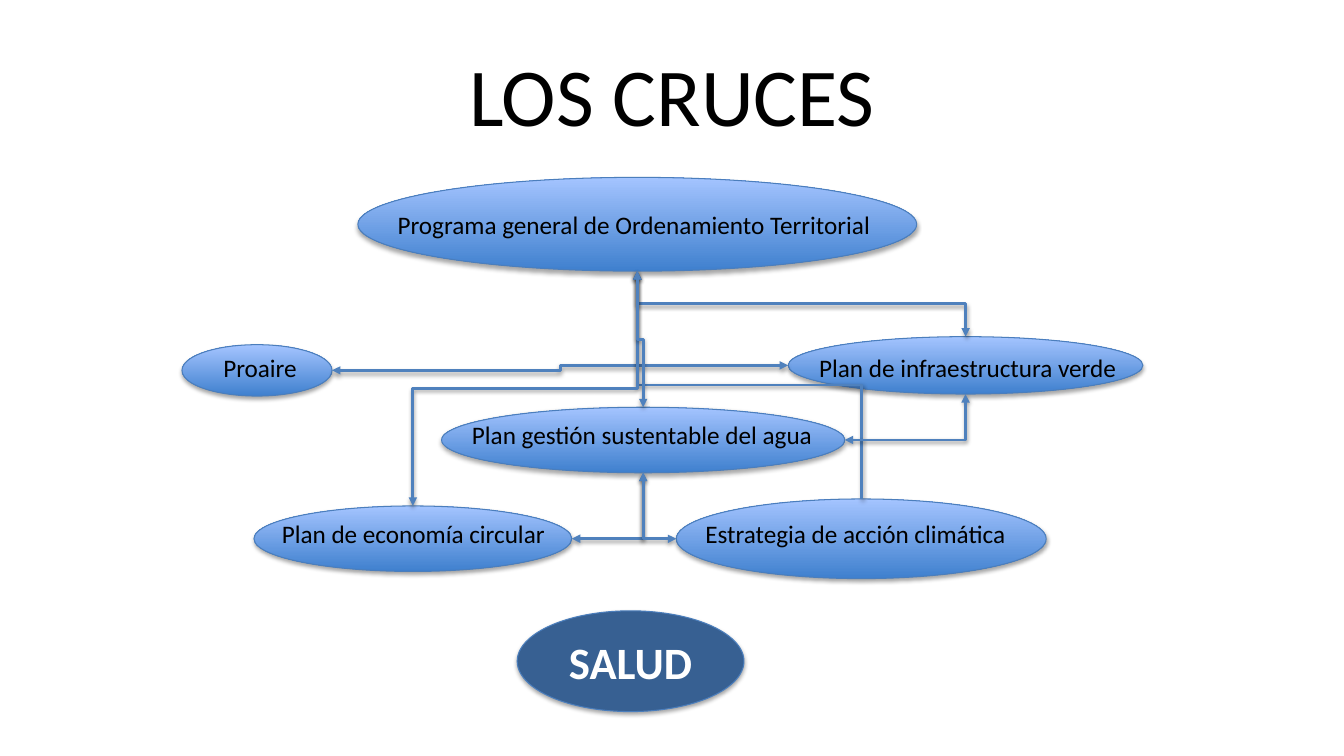
"""Build the slide that shows how the city plans cross each other."""
from dataclasses import dataclass
from enum import Enum

from lxml.etree import SubElement
from pptx import Presentation
from pptx.dml.color import RGBColor
from pptx.enum.shapes import MSO_CONNECTOR as Connector, MSO_SHAPE as Shape
from pptx.enum.text import MSO_ANCHOR as Anchor, MSO_AUTO_SIZE as AutoSize, PP_ALIGN as Align
from pptx.oxml.ns import qn
from pptx.util import Pt

FONT = "Calibri"
LABEL_HEIGHT = 29.1
COLOURS = {
    "text": "000000",
    "light_text": "FFFFFF",
    "gradient_bottom": "3F80CE",
    "gradient_top": "A4C4FF",
    "outline": "4B7EBC",
    "link": "4F81BD",
    "health": "376092",
    "shadow": "000000",
}


class Side(Enum):
    """Middle of an ellipse side, as fractions of its width and height."""
    TOP = (0.5, 0)
    BOTTOM = (0.5, 1)
    LEFT = (0, 0.5)
    RIGHT = (1, 0.5)


@dataclass(frozen=True)
class Plan:
    """An ellipse and the label laid over it, in points."""
    label: str
    left: float
    top: float
    width: float
    height: float
    label_left: float
    label_top: float
    label_width: float

    def point(self, side: Side) -> tuple[float, float]:
        """Return the middle of one side."""
        across, down = side.value
        return self.left + across * self.width, self.top + down * self.height


@dataclass(frozen=True)
class Link:
    """A bent arrow between the sides of two plans."""
    start: str
    start_side: Side
    end: str
    end_side: Side
    bends: int = 2
    two_way: bool = True


PLANS = {
    "water": Plan("Plan gestión sustentable del agua", 315.4, 290.9, 288, 46.8, 328.3, 295.9, 260.6),
    "climate": Plan("Estrategia de acción climática", 483.1, 356.4, 264.2, 56.9, 495.4, 366.5, 231.1),
    "circular": Plan("Plan de economía circular", 181.4, 361.4, 227, 46.8, 193, 366.5, 204.5),
    "green": Plan("Plan de infraestructura verde", 563, 240.5, 253.4, 41, 576.7, 248.4, 229),
    "air": Plan("Proaire", 130, 246.2, 107.2, 36.7, 151.9, 248.4, 67.7),
    "territory": Plan("Programa general de Ordenamiento Territorial", 255.6, 126.7, 399.2, 67, 275, 146.2, 355.7),
}

LINKS = [
    Link("air", Side.RIGHT, "green", Side.LEFT),
    Link("territory", Side.BOTTOM, "green", Side.TOP),
    Link("climate", Side.TOP, "territory", Side.BOTTOM, two_way=False),
    Link("circular", Side.TOP, "territory", Side.BOTTOM),
    Link("water", Side.RIGHT, "green", Side.BOTTOM, bends=1),
    Link("water", Side.TOP, "territory", Side.BOTTOM),
    Link("water", Side.BOTTOM, "circular", Side.RIGHT, bends=1),
    Link("water", Side.BOTTOM, "climate", Side.LEFT, bends=1),
]


def colour(name: str) -> RGBColor:
    """Return a named colour."""
    return RGBColor.from_string(COLOURS[name])


def write(frame, text: str, size: float, colour_name: str, bold: bool = False) -> None:
    """Fill a text frame with one formatted paragraph."""
    frame.text = text
    para = frame.paragraphs[0]
    para.alignment = Align.CENTER
    for span in para.runs:
        span.font.name = FONT
        span.font.size = Pt(size)
        span.font.bold = bold
        span.font.color.rgb = colour(colour_name)


def add_shadow(item, distance: float, opacity: int) -> None:
    """Give a shape or connector a soft shadow straight below it."""
    properties = item._element.spPr
    effects = properties.find(qn("a:effectLst"))
    if effects is None:
        effects = SubElement(properties, qn("a:effectLst"))
    shadow = SubElement(effects, qn("a:outerShdw"), blurRad=str(Pt(3.1)),
                        dist=str(Pt(distance)), dir="5400000", rotWithShape="0")
    tint = SubElement(shadow, qn("a:srgbClr"), val=COLOURS["shadow"])
    SubElement(tint, qn("a:alpha"), val=str(opacity * 1000))


def add_ellipse(page, left: float, top: float, width: float, height: float, fill: str = ""):
    """Draw an outlined ellipse, with a gradient unless a fill is named."""
    ellipse = page.shapes.add_shape(Shape.OVAL, Pt(left), Pt(top), Pt(width), Pt(height))
    if fill:
        ellipse.fill.solid()
        ellipse.fill.fore_color.rgb = colour(fill)
    else:
        ellipse.fill.gradient()
        ellipse.fill.gradient_angle = 90
        for stop, name in zip(ellipse.fill.gradient_stops, ("gradient_bottom", "gradient_top")):
            stop.color.rgb = colour(name)
    ellipse.line.color.rgb = colour("outline")
    ellipse.line.width = Pt(0.75)
    ellipse.shadow.inherit = False
    add_shadow(ellipse, 1.8, 35)
    return ellipse


def add_label(page, plan: Plan) -> None:
    """Write the name of a plan."""
    box = page.shapes.add_textbox(Pt(plan.label_left), Pt(plan.label_top),
                                  Pt(plan.label_width), Pt(LABEL_HEIGHT))
    box.text_frame.word_wrap = False
    box.text_frame.auto_size = AutoSize.SHAPE_TO_FIT_TEXT
    write(box.text_frame, plan.label, 18, "text")


def add_link(page, link: Link) -> None:
    """Draw a bent arrow, turned a quarter when it leaves vertically."""
    x1, y1 = PLANS[link.start].point(link.start_side)
    x2, y2 = PLANS[link.end].point(link.end_side)
    across, down = x2 - x1, y2 - y1
    turn = 0
    if link.start_side in (Side.TOP, Side.BOTTOM):
        turn = 270 if across * down > 0 else 90
        across, down = (-down, across) if turn == 270 else (down, -across)
    middle_x, middle_y = (x1 + x2) / 2, (y1 + y2) / 2
    arrow = page.shapes.add_connector(
        Connector.ELBOW,
        Pt(middle_x - across / 2), Pt(middle_y - down / 2),
        Pt(middle_x + across / 2), Pt(middle_y + down / 2))
    arrow.line.color.rgb = colour("link")
    arrow.line.width = Pt(2)
    properties = arrow._element.spPr
    properties.find(qn("a:prstGeom")).set("prst", f"bentConnector{link.bends + 1}")
    if turn:
        properties.find(qn("a:xfrm")).set("rot", str(turn * 60000))
    line = properties.find(qn("a:ln"))
    if link.two_way:
        SubElement(line, qn("a:headEnd"), type="triangle")
    SubElement(line, qn("a:tailEnd"), type="triangle")
    add_shadow(arrow, 1.6, 38)


def main() -> None:
    """Build and save the deck."""
    deck = Presentation()
    deck.slide_width, deck.slide_height = Pt(960), Pt(540)
    page = deck.slides.add_slide(deck.slide_layouts[5])

    title = page.shapes.title
    title.left, title.top, title.width, title.height = Pt(48), Pt(21.6), Pt(864), Pt(90)
    title.text_frame.vertical_anchor = Anchor.MIDDLE
    write(title.text_frame, "LOS CRUCES", 58.7, "text")

    for plan in PLANS.values():
        add_ellipse(page, plan.left, plan.top, plan.width, plan.height)
    for plan in PLANS.values():
        add_label(page, plan)
    for link in LINKS:
        add_link(page, link)

    health = add_ellipse(page, 369.4, 436.3, 162, 72, "health")
    health.text_frame.vertical_anchor = Anchor.MIDDLE
    write(health.text_frame, "SALUD", 32, "light_text", bold=True)

    deck.save("out.pptx")


if __name__ == "__main__":
    main()
